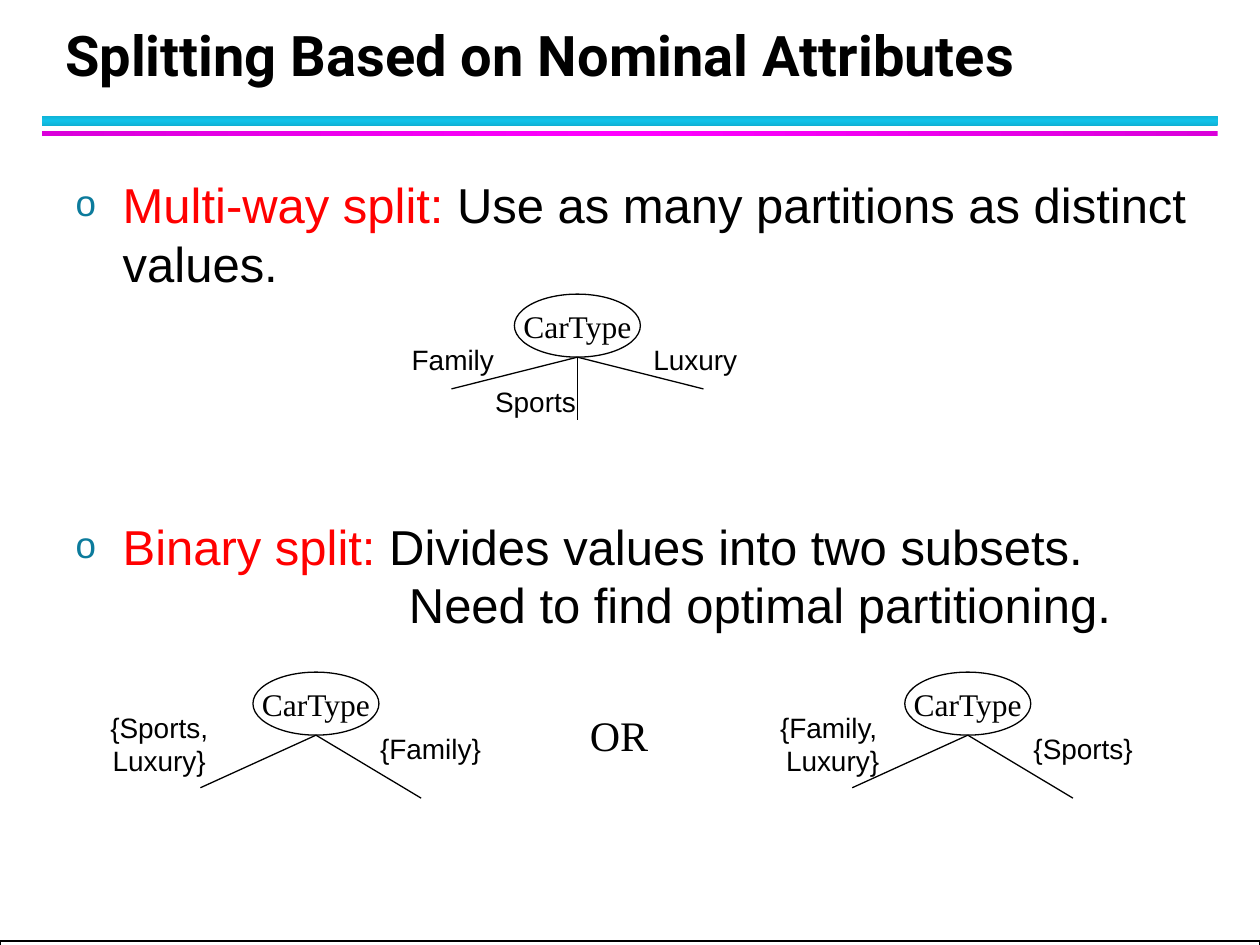
from copy import deepcopy
from dataclasses import dataclass

from lxml import etree
from pptx import Presentation
from pptx import util as u
from pptx.dml import color as c
from pptx.enum import shapes, text
from pptx.oxml import ns

BLACK, WHITE, RED, TEAL = "000000", "FFFFFF", "FF0000", "0C7B9C"
SANS, SERIF, HEADING = "Arial", "Times New Roman", "Roboto"


@dataclass
class Bar:
    top: float
    height: float
    edge: str
    middle: str
    angle: int


@dataclass
class Label:
    words: str
    left: float
    top: float
    width: float
    height: float = 0.94
    wrap: bool = False


@dataclass
class Tree:
    apex: tuple[float, float]
    branches: list[tuple[float, float]]
    labels: list[Label]


@dataclass
class Point:
    lead: str
    rest: str
    indent: float
    before: float
    after: float


BARS = [
    Bar(2.33, 0.21, "10B0D3", "12C2E9", 90),
    Bar(2.64, 0.11, "DA00DA", "FF00FF", 0),
]
BINARY = [(-2.33, 1.06), (2.12, 1.27)]
TREES = [
    Tree((11.64, 7.2), [(-2.54, 0.64), (0, 1.27), (2.54, 0.64)], [
        Label("Family", -3.59, -0.42, 2.16),
        Label("Sports", -1.91, 0.42, 2.13),
        Label("Luxury", 1.27, -0.42, 2.21),
    ]),
    Tree((19.51, 14.82), BINARY, [
        Label("{Family, \vLuxury}", -4.06, -0.64, 2.67, 1.63),
        Label("{Sports}", 1.07, -0.21, 2.51),
    ]),
    Tree((6.37, 14.82), BINARY, [
        Label("{Sports, Luxury}", -4.47, -0.64, 2.62, 1.63, True),
        Label("{Family}", 1.04, -0.21, 2.54),
    ]),
]
POINTS = [
    Point("Multi-way split:", " Use as many partitions as distinct values.", 0.95, 3, 4),
    Point("Binary split:", " Divides values into two subsets.", 0.95, 124, 0),
    Point("", "Need to find optimal partitioning.", 6.72, 0, 4),
]


def rgb(value: str) -> c.RGBColor:
    return c.RGBColor.from_string(value)


def box(left: float, top: float, width: float, height: float) -> list[u.Length]:
    return [u.Cm(value) for value in (left, top, width, height)]


def place(shape, *position: float) -> None:
    shape.left, shape.top, shape.width, shape.height = box(*position)


def style(paragraph, size: int, font: str, color: str = BLACK) -> None:
    for run in paragraph.runs:
        run.font.size = u.Pt(size)
        run.font.name = font
        run.font.color.rgb = rgb(color)


def write(shape, words: str, size: int, font: str, wrap: bool = False) -> None:
    frame = shape.text_frame
    frame.text = words
    frame.word_wrap = wrap
    frame.vertical_anchor = text.MSO_ANCHOR.MIDDLE
    for paragraph in frame.paragraphs:
        paragraph.alignment = text.PP_ALIGN.CENTER
        style(paragraph, size, font)


def add_label(container, label: Label, origin: tuple[float, float], size: int, font: str) -> None:
    shape = container.add_textbox(
        *box(origin[0] + label.left, origin[1] + label.top, label.width, label.height))
    write(shape, label.words, size, font, label.wrap)
    shape.text_frame.auto_size = text.MSO_AUTO_SIZE.SHAPE_TO_FIT_TEXT


def add_outlined(container, kind, position: list[u.Length], line_width: float):
    shape = container.add_shape(kind, *position)
    shape.shadow.inherit = False
    shape.fill.solid()
    shape.fill.fore_color.rgb = rgb(WHITE)
    shape.line.color.rgb = rgb(BLACK)
    shape.line.width = u.Pt(line_width)
    return shape


def add_bar(container, bar: Bar) -> None:
    shape = container.add_shape(
        shapes.MSO_SHAPE.RECTANGLE, *box(0.85, bar.top, 23.7, bar.height))
    shape.shadow.inherit = False
    shape.line.fill.background()
    shape.fill.gradient()
    shape.fill.gradient_angle = bar.angle
    stop_list = shape.element.spPr.find(".//" + ns.qn("a:gsLst"))
    stop_list.append(deepcopy(stop_list[0]))
    colors = (bar.edge, bar.middle, bar.edge)
    for stop, color, position in zip(shape.fill.gradient_stops, colors, (0, 0.5, 1)):
        stop.color.rgb = rgb(color)
        stop.position = position


def add_branch(container, start: tuple[float, float], offset: tuple[float, float]) -> None:
    x, y = start
    line = container.add_connector(
        shapes.MSO_CONNECTOR.STRAIGHT, *box(x, y, x + offset[0], y + offset[1]))
    line.line.color.rgb = rgb(BLACK)
    line.line.width = u.Pt(0.75)
    etree.SubElement(line.element.spPr, ns.qn("a:effectLst"))


def add_tree(container, tree: Tree) -> None:
    group = container.add_group_shape().shapes
    x, y = tree.apex
    root = add_outlined(
        group, shapes.MSO_SHAPE.OVAL, box(x - 1.27, y - 1.27, 2.54, 1.27), 0.75)
    write(root, "CarType", 18, SERIF)
    for branch in tree.branches:
        add_branch(group, tree.apex, branch)
    for label in tree.labels:
        add_label(group, label, tree.apex, 16, SANS)


def set_bullet(paragraph, indent: float, shown: bool) -> None:
    properties = paragraph._p.get_or_add_pPr()
    properties.set("marL", str(u.Cm(indent)))
    properties.set("indent", str(-u.Cm(indent) if shown else 0))
    if not shown:
        etree.SubElement(properties, ns.qn("a:buNone"))
        return
    bullet_color = etree.SubElement(properties, ns.qn("a:buClr"))
    etree.SubElement(bullet_color, ns.qn("a:srgbClr"), val=TEAL)
    etree.SubElement(properties, ns.qn("a:buSzPct"), val="75000")
    etree.SubElement(properties, ns.qn("a:buFont"), typeface=SANS)
    etree.SubElement(properties, ns.qn("a:buChar"), char="o")


def fill_title(title) -> None:
    place(title, 1.06, 0.42, 23.92, 1.48)
    frame = title.text_frame
    frame.text = "Splitting Based on Nominal Attributes"
    frame.auto_size = text.MSO_AUTO_SIZE.NONE
    frame.vertical_anchor = text.MSO_ANCHOR.BOTTOM
    paragraph = frame.paragraphs[0]
    paragraph.alignment = text.PP_ALIGN.LEFT
    paragraph.line_spacing = u.Pt(36)
    style(paragraph, 32, HEADING)
    paragraph.runs[0].font.bold = True


def fill_body(body) -> None:
    place(body, 1.27, 3.39, 23.28, 10.37)
    frame = body.text_frame
    frame.auto_size = text.MSO_AUTO_SIZE.NONE
    for index, point in enumerate(POINTS):
        paragraph = frame.add_paragraph() if index else frame.paragraphs[0]
        paragraph.space_before = u.Pt(point.before)
        paragraph.space_after = u.Pt(point.after)
        set_bullet(paragraph, point.indent, bool(point.lead))
        for words in filter(None, (point.lead, point.rest)):
            paragraph.add_run().text = words
        style(paragraph, 28, SANS)
        if point.lead:
            paragraph.runs[0].font.color.rgb = rgb(RED)


def main() -> None:
    presentation = Presentation()
    presentation.slide_width, presentation.slide_height = u.Cm(25.4), u.Cm(19.05)
    slide = presentation.slides.add_slide(presentation.slide_layouts[1])
    fill_title(slide.shapes.title)
    fill_body(slide.placeholders[1])
    for bar in BARS:
        add_bar(slide.shapes, bar)
    add_outlined(slide.shapes, shapes.MSO_SHAPE.RECTANGLE, box(0, 18.97, 25.4, 0.84), 1)
    for tree in TREES:
        add_tree(slide.shapes, tree)
    add_label(slide.shapes, Label("OR", 11.64, 14.18, 1.68, 1.27), (0, 0), 24, SERIF)
    presentation.save("out.pptx")


if __name__ == "__main__":
    main()
